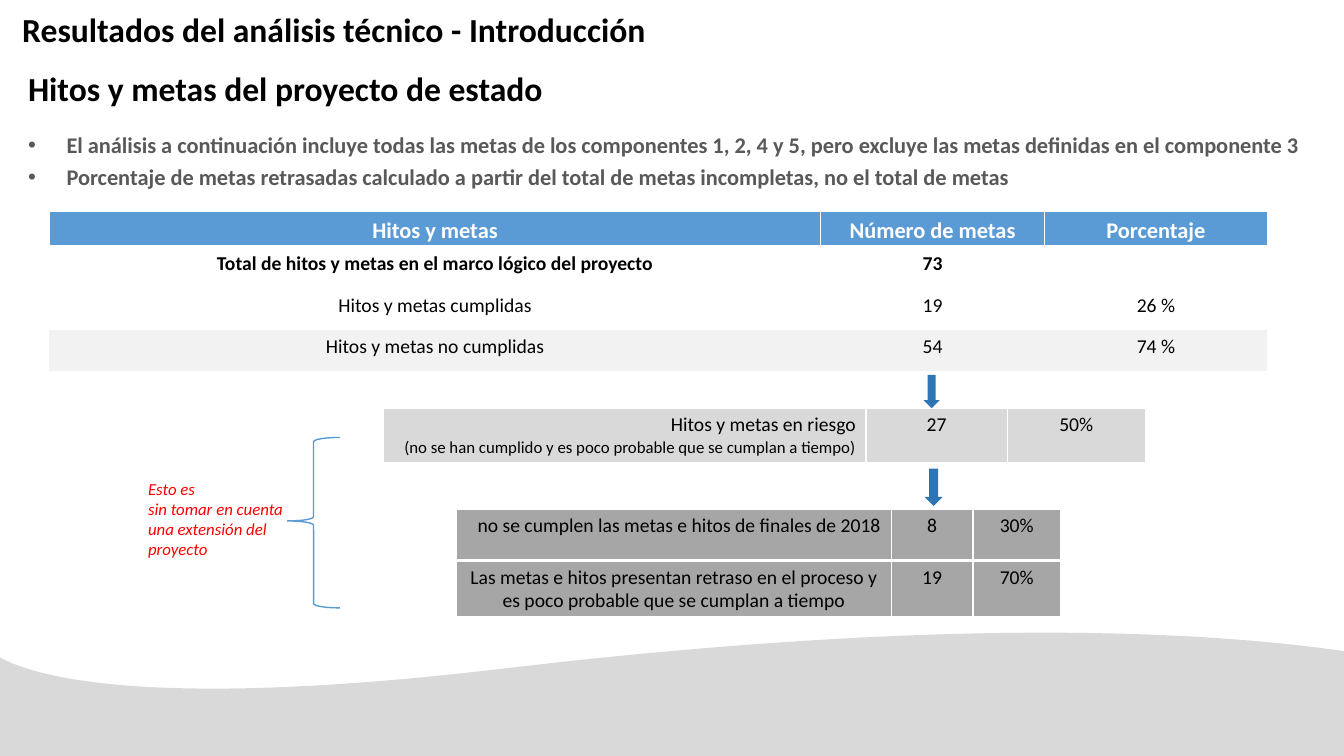
"""Build the slide on project milestones and targets."""
import pptx
import pptx.util
import pptx.dml.color
import pptx.oxml
import pptx.oxml.ns
import pptx.enum.text
import pptx.enum.shapes

WIDE, HIGH = 13.33, 7.5
WHITE, BLACK, GREY, RED = "FFFFFF", "000000", "595959", "FF0000"
BLUE, DARK = "5B9BD5", "2E75B6"
ALIGN = pptx.enum.text.PP_ALIGN
KIND = pptx.enum.shapes.MSO_SHAPE

TITLE = "Resultados del análisis técnico - Introducción"
HEAD = "Hitos y metas del proyecto de estado"
POINTS = [
    "El análisis a continuación incluye todas las metas de los componentes 1, 2, 4 y 5, "
    "pero excluye las metas definidas en el componente 3",
    "Porcentaje de metas retrasadas calculado a partir del total de metas incompletas, "
    "no el total de metas",
]
NOTE = ["Esto es", "sin tomar en cuenta", "una extensión del proyecto"]
TABLES = [
    {"at": (0.49, 2.1), "cols": (7.65, 2.22, 2.21), "rows": [
        {"text": ("Hitos y metas", "Número de metas", "Porcentaje"), "high": 0.35,
         "fill": BLUE, "size": 16, "color": WHITE, "bold": True, "base": 3},
        {"text": ("Total de hitos y metas en el marco lógico del proyecto", "73", ""),
         "high": 0.41, "fill": WHITE, "bold": True},
        {"text": ("Hitos y metas cumplidas", "19", "26 %"), "high": 0.41, "fill": WHITE},
        {"text": ("Hitos y metas no cumplidas", "54", "74 %"), "high": 0.41,
         "fill": "F2F2F2", "edge": 0, "base": 0},
    ]},
    {"at": (3.8, 4.05), "cols": (4.79, 1.4, 1.37), "rows": [
        {"text": ("Hitos y metas en riesgo\n"
                  "(no se han cumplido y es poco probable que se cumplan a tiempo)",
                  "27", "50%"),
         "high": 0.55, "fill": "D9D9D9", "first": ALIGN.RIGHT, "base": 3},
    ]},
    {"at": (4.53, 5.05), "cols": (4.31, 0.81, 0.87), "rows": [
        {"text": ("no se cumplen las metas e hitos de finales de 2018", "8", "30%"),
         "high": 0.51, "fill": "A6A6A6", "first": ALIGN.RIGHT, "base": 3},
        {"text": ("Las metas e hitos presentan retraso en el proceso y "
                  "es poco probable que se cumplan a tiempo", "19", "70%"),
         "high": 0.55, "fill": "A6A6A6"},
    ]},
]
ARROWS = [(9.16, 3.72, 0.16, 0.33), (9.17, 4.65, 0.18, 0.37)]
WAVE = [
    [(13.33, 6.46), (11.65, 6.22), (9.02, 6.16), (5.02, 6.63)],
    [(5.02, 6.63), (1.33, 7.07), (0.26, 6.68), (-0.02, 6.51)],
]
STEPS = 40


def inch(*nums):
    return [pptx.util.Inches(num) for num in nums]


def paint(hue):
    return pptx.dml.color.RGBColor.from_string(hue)


def style(para, size, hue, bold=False, slant=False, align=ALIGN.LEFT):
    para.alignment = align
    for run in para.runs:
        font = run.font
        font.name, font.size = "Calibri", pptx.util.Pt(size)
        font.bold, font.italic = bold, slant
        font.color.rgb = paint(hue)


def place(shape, *box):
    shape.left, shape.top, shape.width, shape.height = inch(*box)
    frame = shape.text_frame
    frame.word_wrap = True
    frame.auto_size = pptx.enum.text.MSO_AUTO_SIZE.NONE
    frame.vertical_anchor = pptx.enum.text.MSO_ANCHOR.TOP
    return frame


def border(cell, edge, base):
    props = cell._tc.get_or_add_tcPr()
    for side, width in zip("LRTB", (edge, edge, edge, base)):
        fill = (f'<a:solidFill><a:srgbClr val="{WHITE}"/></a:solidFill>'
                if width else "<a:noFill/>")
        props.append(pptx.oxml.parse_xml(
            f'<a:ln{side} {pptx.oxml.ns.nsdecls("a")} w="{pptx.util.Pt(width)}">'
            f'{fill}</a:ln{side}>'))


def add_grid(slide, at, cols, rows):
    box = inch(*at, sum(cols), sum(row["high"] for row in rows))
    table = slide.shapes.add_table(len(rows), len(cols), *box).table
    for col, width in zip(table.columns, cols):
        col.width = pptx.util.Inches(width)
    for r, row in enumerate(rows):
        table.rows[r].height = pptx.util.Inches(row["high"])
        for c, text in enumerate(row["text"]):
            cell = table.cell(r, c)
            cell.margin_top, cell.margin_bottom = inch(0.05, 0.03)
            border(cell, row.get("edge", 1), row.get("base", 1))
            cell.fill.solid()
            cell.fill.fore_color.rgb = paint(row["fill"])
            cell.text_frame.text = text
            align = ALIGN.CENTER if c else row.get("first", ALIGN.CENTER)
            for i, para in enumerate(cell.text_frame.paragraphs):
                size = 12 if i else row.get("size", 14)
                style(para, size, row.get("color", BLACK), row.get("bold", False), align=align)


def add_solid(shape, hue):
    shape.shadow.inherit = False
    shape.fill.solid()
    shape.fill.fore_color.rgb = paint(hue)
    shape.line.fill.background()


def curve(ends):
    for step in range(STEPS + 1):
        t = step / STEPS
        parts = ((1 - t) ** 3, 3 * t * (1 - t) ** 2, 3 * t * t * (1 - t), t ** 3)
        yield inch(*(sum(k * p[axis] for k, p in zip(parts, ends)) for axis in (0, 1)))


def add_wave(slide):
    form = slide.shapes.build_freeform(*inch(WIDE, HIGH), scale=1.0)
    dots = [dot for ends in WAVE for dot in curve(ends)]
    form.add_line_segments(dots + [inch(-0.02, HIGH)], close=True)
    add_solid(form.convert_to_shape(), "D9D9D9")


def add_points(slide):
    frame = place(slide.placeholders[1], 0.18, 1.25, 12.91, 1.05)
    frame.text = "\n".join(POINTS)
    for para in frame.paragraphs:
        style(para, 16, GREY, True)
        para.space_before, para.space_after = pptx.util.Pt(0), pptx.util.Pt(4)
        props = para._p.get_or_add_pPr()
        props.set("marL", str(pptx.util.Inches(0.38)))
        props.set("indent", str(pptx.util.Inches(-0.38)))
        props.append(pptx.oxml.parse_xml(
            f'<a:buChar {pptx.oxml.ns.nsdecls("a")} char="•"/>'))


def main():
    deck = pptx.Presentation()
    deck.slide_width, deck.slide_height = inch(WIDE, HIGH)
    slide = deck.slides.add_slide(deck.slide_layouts[1])
    shapes = slide.shapes
    add_wave(slide)

    frame = place(shapes.title, 0.12, 0.04, 6.73, 0.5)
    frame.text = TITLE
    style(frame.paragraphs[0], 24, BLACK, True)
    add_points(slide)
    frame = place(shapes.add_textbox(0, 0, 0, 0), 0.18, 0.62, 6.91, 0.5)
    frame.text = HEAD
    style(frame.paragraphs[0], 24, BLACK, True)

    for grid in TABLES:
        add_grid(slide, **grid)
    for box in ARROWS:
        add_solid(shapes.add_shape(KIND.DOWN_ARROW, *inch(*box)), DARK)

    brace = shapes.add_shape(KIND.LEFT_BRACE, *inch(2.85, 4.34, 0.52, 1.69))
    brace.shadow.inherit = False
    brace.adjustments[0], brace.adjustments[1] = 0.08, 0.49
    brace.fill.background()
    brace.line.color.rgb = paint(BLUE)
    brace.line.width = pptx.util.Pt(1)

    frame = place(shapes.add_textbox(0, 0, 0, 0), 1.37, 4.7, 1.68, 0.91)
    frame.text = "\n".join(NOTE)
    for para in frame.paragraphs:
        style(para, 12, RED, slant=True)
    deck.save("out.pptx")


if __name__ == "__main__":
    main()
